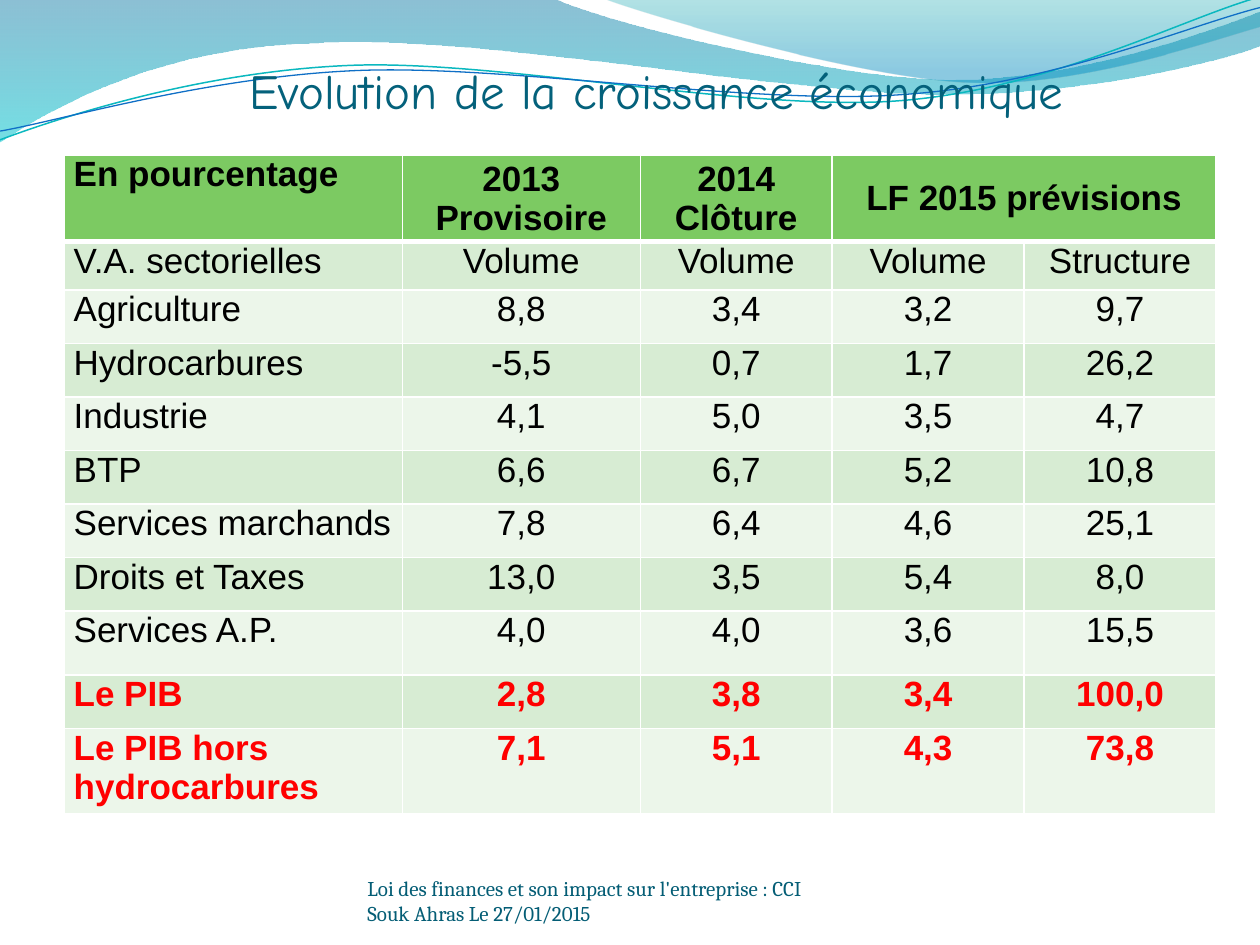
from math import cos, radians, sin

from lxml import etree
from pptx import Presentation
from pptx.dml.color import RGBColor
from pptx.enum import text as t
from pptx.oxml.ns import qn
from pptx.util import Pt

WHITE = RGBColor(0xFF, 0xFF, 0xFF)
BLACK = RGBColor(0, 0, 0)
RED = RGBColor(0xFF, 0, 0)
HEAD = RGBColor(0x7C, 0xCA, 0x62)
DARK = RGBColor(0xD7, 0xEC, 0xD3)
LIGHT = RGBColor(0xEC, 0xF6, 0xEA)
TEAL = RGBColor(0x04, 0x61, 0x7B)
DEEP = RGBColor(0x04, 0x5D, 0x75)

TITLE = "Evolution de la croissance économique"
NOTE = "Loi des finances et son impact sur l'entreprise : CCI Souk Ahras Le 27/01/2015"
ROWS = [
    ("En pourcentage", "2013 Provisoire", "2014 Clôture", "LF 2015 prévisions", ""),
    ("V.A. sectorielles", "Volume", "Volume", "Volume", "Structure"),
    ("Agriculture", "8,8", "3,4", "3,2", "9,7"),
    ("Hydrocarbures", "-5,5", "0,7", "1,7", "26,2"),
    ("Industrie", "4,1", "5,0", "3,5", "4,7"),
    ("BTP", "6,6", "6,7", "5,2", "10,8"),
    ("Services marchands", "7,8", "6,4", "4,6", "25,1"),
    ("Droits et Taxes", "13,0", "3,5", "5,4", "8,0"),
    ("Services A.P.", "4,0", "4,0", "3,6", "15,5"),
    ("Le PIB", "2,8", "3,8", "3,4", "100,0"),
    ("Le PIB hors hydrocarbures", "7,1", "5,1", "4,3", "73,8"),
]
WIDTHS = [193, 136, 109.7, 109.7, 109.7]
HEIGHTS = [49.5, 27.5] + [30.6] * 6 + [36.5, 30.6, 49]

BANDS = [
    ([[(0, 0)], [(316.8, -0.7)], [(342.7, 12.2), (478.1, 45.4), (545.8, 45.4)],
      [(614.2, 45.4), (689.8, 18.7), (720, 6.5)], [(720.7, 25.9)],
      [(707.8, 31.7), (626.4, 54.7), (537.1, 54)],
      [(447.8, 54), (275, 20.2), (185, 24.5)],
      [(92.9, 25.9), (33.1, 59.8), (-0.7, 81.4)]],
     [(0, RGBColor(0, 0x74, 0xA1), 45), (1, RGBColor(0, 0xC6, 0xCF), 55)]),
    ([[(344.9, -0.7)], [(366.5, 7.9), (491, 44.6), (553.7, 46.8)],
      [(616.3, 49.7), (691.9, 23), (720, 15.1)], [(720, 0)]],
     [(0, RGBColor(0, 0xA1, 0xA9), 30), (0.8, RGBColor(0, 0x8B, 0xBF), 45)]),
]
WAVES = [
    ([[(0, 79.9)], [(34.6, 67), (113.8, 41), (199.4, 37.4)],
      [(284.4, 33.8), (427, 64.1), (513.4, 57.6)],
      [(599.8, 51.1), (675.4, 10.8), (718.6, -1.4)]],
     (359.3, 41.4), RGBColor(0x0A, 0xB8, 0xBF), 0.85),
    ([[(0, 74.9)], [(33.8, 69.1), (118.1, 43.9), (203.8, 40.3)],
      [(290.2, 36.7), (429.8, 60.5), (516.2, 54)],
      [(601.9, 48.2), (677.5, 15.1), (720, 4.3)]],
     (359.3, 42.5), RGBColor(0x0F, 0x6F, 0xC6), 0.75),
]
TILT = 2.7


def turn(point, mid):
    c, s = cos(radians(TILT)), sin(radians(TILT))
    x, y = point[0] - mid[0], point[1] - mid[1]
    return mid[0] + x * c - y * s, mid[1] + x * s + y * c


def draw(shapes, steps, close):
    ends = [(Pt(x), Pt(y)) for step in steps for x, y in step]
    pen = shapes.build_freeform(*ends[0], scale=1.0)
    pen.add_line_segments(ends[1:], close=close)
    shape = pen.convert_to_shape()
    shape.shadow.inherit = False
    nodes = iter(list(shape._element.spPr.iter(qn("a:lnTo"))))
    for step in steps[1:]:
        lines = [next(nodes) for _ in step]
        if len(step) == 3:
            curve = etree.Element(qn("a:cubicBezTo"))
            lines[0].addprevious(curve)
            for line in lines:
                curve.append(line[0])
                line.getparent().remove(line)
    return shape


def add_bands(slide):
    for steps, stops in BANDS:
        band = draw(slide.shapes, steps, True)
        band.line.fill.background()
        band.fill.gradient()
        band.fill.gradient_angle = 270
        for stop, (pos, hue, _) in zip(band.fill.gradient_stops, stops):
            stop.position = pos
            stop.color.rgb = hue
        for node, (_, _, alpha) in zip(band._element.spPr.iter(qn("a:srgbClr")), stops):
            etree.SubElement(node, qn("a:alpha"), val=str(alpha * 1000))


def add_waves(slide):
    group = slide.shapes.add_group_shape()
    for steps, mid, hue, width in WAVES:
        level = [[turn(point, mid) for point in step] for step in steps]
        wave = draw(group.shapes, level, False)
        wave.rotation = 360 - TILT
        wave.fill.background()
        wave.line.color.rgb = hue
        wave.line.width = Pt(width)


def style(par, size, face, hue, bold=False):
    for run in par.runs:
        font = run.font
        font.size, font.name, font.bold = Pt(size), face, bold
        font.color.rgb = hue


def place(shape, left, top, width, height):
    shape.left, shape.top = Pt(left), Pt(top)
    shape.width, shape.height = Pt(width), Pt(height)


def edge(cell, row):
    props = cell._tc.get_or_add_tcPr()
    sides = {"L": 1, "R": 1, "T": 3 if row == 1 else 1, "B": 3 if row == 0 else 1}
    for i, (side, width) in enumerate(sides.items()):
        line = etree.Element(qn("a:ln" + side), w=str(Pt(width)))
        fill = etree.SubElement(line, qn("a:solidFill"))
        etree.SubElement(fill, qn("a:srgbClr"), val=str(WHITE))
        props.insert(i, line)


def add_grid(slide):
    frame = slide.shapes.add_table(len(ROWS), len(WIDTHS), Pt(36.9), Pt(88.6),
                                   Pt(sum(WIDTHS)), Pt(sum(HEIGHTS)))
    grid = frame.table
    for col, width in zip(grid.columns, WIDTHS):
        col.width = Pt(width)
    for row, height in zip(grid.rows, HEIGHTS):
        row.height = Pt(height)
    for r, words in enumerate(ROWS):
        for c, word in enumerate(words):
            cell = grid.cell(r, c)
            cell.text_frame.text = word
            cell.margin_left = cell.margin_right = Pt(5.2)
            cell.margin_top = cell.margin_bottom = 0
            cell.fill.solid()
            cell.fill.fore_color.rgb = HEAD if r == 0 else DARK if r % 2 else LIGHT
            middle = r == 0 and c > 0
            cell.vertical_anchor = t.MSO_ANCHOR.MIDDLE if middle else t.MSO_ANCHOR.TOP
            par = cell.text_frame.paragraphs[0]
            first = t.PP_ALIGN.LEFT if r else t.PP_ALIGN.JUSTIFY
            par.alignment = t.PP_ALIGN.CENTER if c else first
            total = r >= len(ROWS) - 2
            style(par, 20, "Arial", RED if total else BLACK, r == 0 or total)
            edge(cell, r)
    grid.cell(0, 3).merge(grid.cell(0, 4))


def add_words(shape, words, align, size, face, hue, top=0):
    frame = shape.text_frame
    frame.text = words
    frame.word_wrap = True
    frame.auto_size = t.MSO_AUTO_SIZE.NONE
    frame.vertical_anchor = t.MSO_ANCHOR.BOTTOM
    frame.margin_left = frame.margin_right = frame.margin_bottom = 0
    frame.margin_top = Pt(top)
    frame.paragraphs[0].alignment = align
    style(frame.paragraphs[0], size, face, hue)


def main():
    deck = Presentation()
    deck.slide_width, deck.slide_height = Pt(720), Pt(540)
    slide = deck.slides.add_slide(deck.slide_layouts[5])
    add_bands(slide)
    add_waves(slide)
    title = slide.shapes.title
    place(title, 48, 0, 654, 68)
    add_words(title, TITLE, t.PP_ALIGN.CENTER, 28, "Comic Neue", TEAL, 3.6)
    slide.shapes._spTree.append(title._element)
    add_grid(slide)
    note = slide.shapes.add_textbox(Pt(210), Pt(500.4), Pt(264), Pt(28.8))
    add_words(note, NOTE, t.PP_ALIGN.LEFT, 12, "Cambria", DEEP)
    deck.save("out.pptx")


if __name__ == "__main__":
    main()
